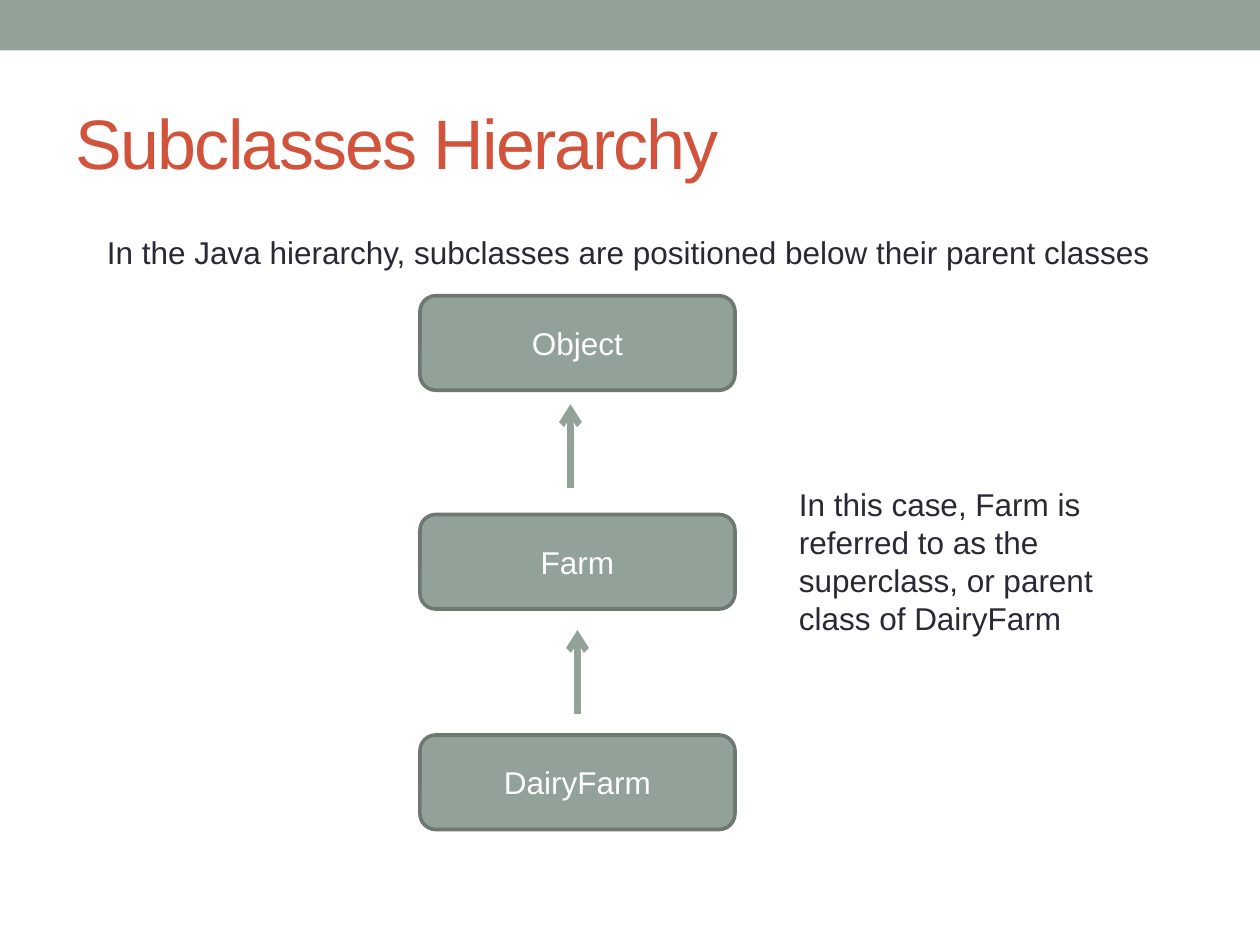
"""Build a slide showing the Java subclass hierarchy from Object to DairyFarm."""
from lxml.etree import SubElement
from pptx import Presentation
from pptx.dml.color import RGBColor
from pptx.enum.shapes import MSO_CONNECTOR as Connector, MSO_SHAPE as Shape
from pptx.enum.text import MSO_ANCHOR as Anchor, MSO_AUTO_SIZE as AutoSize, PP_ALIGN as Align
from pptx.oxml.ns import qn
from pptx.util import Pt

SAGE = RGBColor(0x93, 0xA2, 0x99)
SAGE_DARK = RGBColor(0x6D, 0x78, 0x71)
RUST = RGBColor(0xD2, 0x53, 0x3C)
INK = RGBColor(0x29, 0x29, 0x34)
WHITE = RGBColor(0xFF, 0xFF, 0xFF)


def write(shape, text, size, color, align=Align.LEFT, anchor=Anchor.TOP):
    frame = shape.text_frame
    frame.text = text
    frame.word_wrap = True
    frame.vertical_anchor = anchor
    paragraph = frame.paragraphs[0]
    paragraph.alignment = align
    paragraph.font.name = "Arial"
    paragraph.font.size = Pt(size)
    paragraph.font.color.rgb = color


prs = Presentation()
prs.slide_width, prs.slide_height = Pt(720), Pt(540)
slide = prs.slides.add_slide(prs.slide_layouts[5])
shapes = slide.shapes

banner = shapes.add_shape(Shape.RECTANGLE, 0, 0, Pt(720), Pt(28.8))
banner.shadow.inherit = False
banner.fill.solid()
banner.fill.fore_color.rgb = SAGE
banner.line.fill.background()

title = shapes.title
title.left, title.top, title.width, title.height = Pt(36), Pt(42), Pt(648), Pt(78)
write(title, "Subclasses Hierarchy", 40, RUST, anchor=Anchor.MIDDLE)
title.text_frame.auto_size = AutoSize.NONE
title.text_frame.paragraphs[0].runs[0].font._element.set("spc", "-100")

for class_name, top in (("Object", 169), ("Farm", 294), ("DairyFarm", 420)):
    class_box = shapes.add_shape(Shape.ROUNDED_RECTANGLE, Pt(240), Pt(top), Pt(180), Pt(54))
    class_box.shadow.inherit = False
    class_box.fill.solid()
    class_box.fill.fore_color.rgb = SAGE
    class_box.line.color.rgb = SAGE_DARK
    class_box.line.width = Pt(2.08)
    write(class_box, class_name, 18, WHITE, Align.CENTER, Anchor.MIDDLE)

for x, start, end in ((330, 408, 360), (326, 279, 231)):
    parent_arrow = shapes.add_connector(Connector.STRAIGHT, Pt(x), Pt(start), Pt(x), Pt(end))
    parent_arrow.line.color.rgb = SAGE
    parent_arrow.line.width = Pt(3.75)
    SubElement(parent_arrow.line._get_or_add_ln(), qn("a:tailEnd"), type="arrow")
    SubElement(parent_arrow._element.spPr, qn("a:effectLst"))

for remark, left, top, width, height in (
    ("In the Java hierarchy, subclasses are positioned below their parent classes",
     54, 129.6, 612, 29),
    ("In this case, Farm is referred to as the superclass, or parent class of DairyFarm",
     449.4, 273.8, 216, 94),
):
    remark_box = shapes.add_textbox(Pt(left), Pt(top), Pt(width), Pt(height))
    write(remark_box, remark, 18, INK)
    remark_box.text_frame.auto_size = AutoSize.SHAPE_TO_FIT_TEXT

prs.save("out.pptx")
